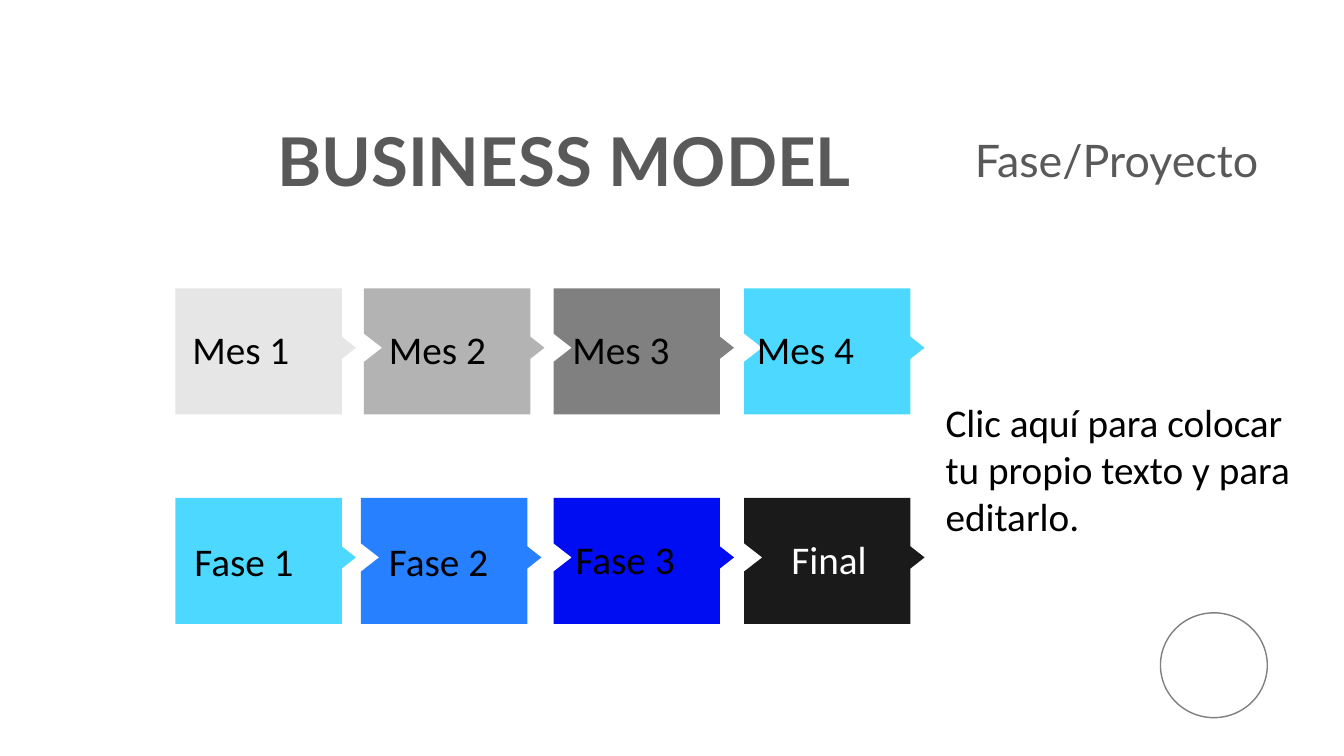
from pptx import Presentation
from pptx.dml.color import RGBColor
from pptx.enum.shapes import MSO_SHAPE
from pptx.enum.text import MSO_ANCHOR, MSO_AUTO_SIZE, PP_ALIGN
from pptx.util import Inches, Pt

OVAL = MSO_SHAPE.OVAL
TOP, MIDDLE = MSO_ANCHOR.TOP, MSO_ANCHOR.MIDDLE
NONE = MSO_AUTO_SIZE.NONE
LEFT, CENTER, RIGHT = PP_ALIGN.LEFT, PP_ALIGN.CENTER, PP_ALIGN.RIGHT

BLACK = RGBColor(0x00, 0x00, 0x00)
WHITE = RGBColor(0xFF, 0xFF, 0xFF)
SLATE = RGBColor(0x59, 0x59, 0x59)
PALE = RGBColor(0xE6, 0xE6, 0xE6)
SILVER = RGBColor(0xB3, 0xB3, 0xB3)
GRAY = RGBColor(0x80, 0x80, 0x80)
CYAN = RGBColor(0x4D, 0xD9, 0xFF)
AZURE = RGBColor(0x26, 0x80, 0xFF)
BLUE = RGBColor(0x00, 0x0D, 0xF2)
COAL = RGBColor(0x1A, 0x1A, 0x1A)

deck = Presentation()
deck.slide_width, deck.slide_height = Inches(13.33), Inches(7.5)
slide = deck.slides.add_slide(deck.slide_layouts[5])
shapes = slide.shapes


def write(box, text, size, color, face="Calibri", align=LEFT, bold=False):
    frame = box.text_frame
    frame.word_wrap = True
    frame.auto_size = NONE
    frame.vertical_anchor = TOP
    frame.text = text
    line = frame.paragraphs[0]
    line.alignment = align
    font = line.font
    font.name, font.size, font.bold = face, Pt(size), bold
    font.color.rgb = color


def label(x, y, wide, high, *style):
    box = shapes.add_textbox(Inches(x), Inches(y), Inches(wide), Inches(high))
    write(box, *style)


title = shapes.title
title.left, title.top = Inches(2.15), Inches(1.13)
title.width, title.height = Inches(6.89), Inches(0.91)
write(title, "BUSINESS MODEL", 48, SLATE, "Lato", CENTER, True)
title.text_frame.vertical_anchor = MIDDLE

ring = shapes.add_shape(OVAL, Inches(11.51), Inches(6.08), Inches(1.06), Inches(1.04))
ring.shadow.inherit = False
ring.fill.background()
ring.line.color.rgb = GRAY
ring.line.width = Pt(1)

label(9.52, 1.27, 3.06, 0.64, "Fase/Proyecto", 32, SLATE, "Lato", RIGHT)

WIDE, HIGH = 1.65, 1.25
MID = 0.59
TAB = [(WIDE, 0), (WIDE, MID - 0.11), (WIDE + 0.14, MID), (WIDE, MID + 0.11),
       (WIDE, HIGH), (0, HIGH)]
NOTCH = [(0, MID + 0.14), (0.18, MID), (0, MID - 0.14)]

months = [
    (1.74, PALE, "Mes 1", 1.81, 3.18, BLACK),
    (3.61, SILVER, "Mes 2", 3.76, 3.18, BLACK),
    (5.49, GRAY, "Mes 3", 5.58, 3.18, BLACK),
    (7.38, CYAN, "Mes 4", 7.41, 3.18, BLACK),
]
phases = [
    (1.74, CYAN, "Fase 1", 1.83, 5.28, BLACK),
    (3.58, AZURE, "Fase 2", 3.76, 5.28, BLACK),
    (5.49, BLUE, "Fase 3", 5.61, 5.26, BLACK),
    (7.38, COAL, "Final", 7.75, 5.26, WHITE),
]

for top, row in ((2.86, months), (4.94, phases)):
    for step, (x, fill, text, left, high, ink) in enumerate(row):
        edge = TAB + NOTCH if step else TAB
        pen = shapes.build_freeform(Inches(x), Inches(top))
        pen.add_line_segments([(Inches(x + dx), Inches(top + dy)) for dx, dy in edge])
        piece = pen.convert_to_shape()
        piece.shadow.inherit = False
        piece.fill.solid()
        piece.fill.fore_color.rgb = fill
        piece.line.fill.background()
        label(left, high, 1.6, 0.57, text, 28, ink)

label(9.28, 3.9, 3.91, 1.51,
      "Clic aquí para colocar tu propio texto y para editarlo.", 28, BLACK)

deck.save("out.pptx")
